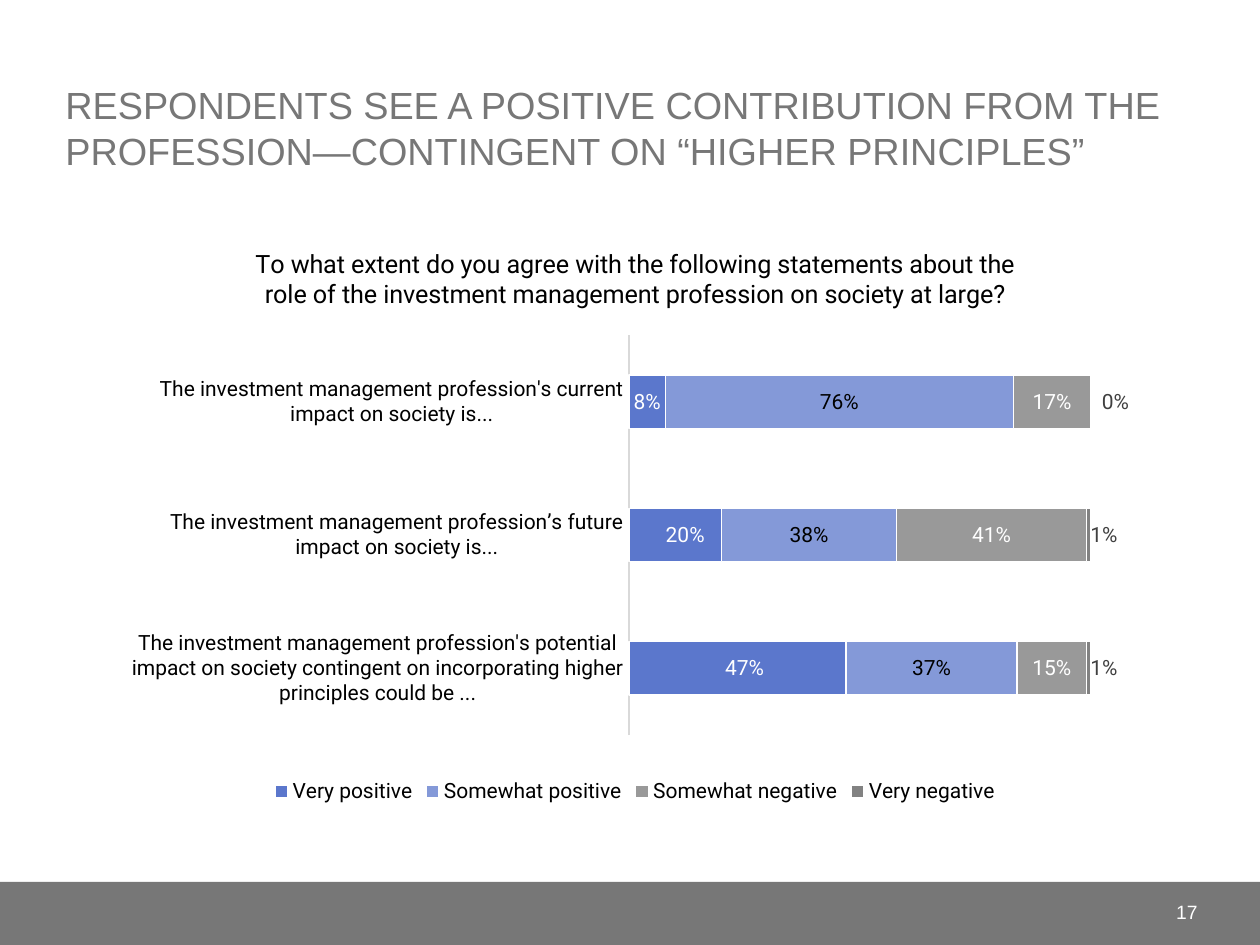
from lxml.etree import SubElement
from pptx import Presentation
from pptx.chart.data import CategoryChartData
from pptx.dml.color import RGBColor
from pptx.enum.chart import XL_CHART_TYPE, XL_LEGEND_POSITION, XL_TICK_LABEL_POSITION, XL_TICK_MARK
from pptx.enum.shapes import MSO_SHAPE
from pptx.enum.text import MSO_ANCHOR, PP_ALIGN
from pptx.oxml import parse_xml
from pptx.oxml.ns import nsdecls, qn
from pptx.util import Emu, Pt

WHITE = RGBColor(0xFF, 0xFF, 0xFF)
BLACK = RGBColor(0x00, 0x00, 0x00)
BLUE = RGBColor(0x5B, 0x77, 0xCC)
GRAY = RGBColor(0x77, 0x77, 0x77)
DARK_GRAY = RGBColor(0x59, 0x59, 0x59)
LABEL_GRAY = RGBColor(0x40, 0x40, 0x40)
AXIS_GRAY = RGBColor(0xD9, 0xD9, 0xD9)

QUESTION = ("To what extent do you agree with the following statements about the "
            "role of the investment management profession on society at large?")
STATEMENTS = [
    "The investment management profession's potential impact on society "
    "contingent on incorporating higher principles could be ...",
    "The investment management profession’s future impact on society is...",
    "The investment management profession's current impact on society is...",
]
ANSWERS = [
    ("Very positive", (0.47, 0.2, 0.08), BLUE, 100, WHITE, {0: 0.007, 1: 0.01}),
    ("Somewhat positive", (0.37, 0.38, 0.76), BLUE, 75, BLACK, {}),
    ("Somewhat negative", (0.15, 0.41, 0.17), GRAY, 75, WHITE, {}),
    ("Very negative", (0.01, 0.01, 0), DARK_GRAY, 75, LABEL_GRAY,
     {0: 0.015, 1: 0.015, 2: 0.024}),
]
PLOT_AREA = {"x": 0.494, "y": 0.19, "w": 0.454, "h": 0.684}


def px(length):
    return Emu(round(length * 914400 / 126))


def manual_layout(modes, numbers):
    parts = [f'<c:{tag} val="{value}"/>' for tag, value in [*modes.items(), *numbers.items()]]
    return parse_xml(f'<c:layout {nsdecls("c")}><c:manualLayout>'
                     f'{"".join(parts)}</c:manualLayout></c:layout>')


class SlideWriter:
    heading_font = "Arial"
    chart_font = "Roboto"
    chart_size = 12

    def __init__(self, slide):
        self.slide = slide

    def style(self, font, name, size, color):
        font.name = name
        font.size = Pt(size)
        font.bold = False
        font.color.rgb = color

    def band(self, left, top, width, height, color):
        band = self.slide.shapes.add_shape(
            MSO_SHAPE.RECTANGLE, px(left), px(top), px(width), px(height))
        band.shadow.inherit = False
        band.fill.solid()
        band.fill.fore_color.rgb = color
        band.line.fill.background()

    def text(self, left, top, width, height, words, size, color, anchor, align=PP_ALIGN.LEFT):
        frame = self.slide.shapes.add_textbox(
            px(left), px(top), px(width), px(height)).text_frame
        frame.word_wrap = True
        frame.vertical_anchor = anchor
        paragraph = frame.paragraphs[0]
        paragraph.text = words
        paragraph.alignment = align
        self.style(paragraph.font, self.heading_font, size, color)

    def survey_chart(self, left, top, width, height, question, statements, answers):
        data = CategoryChartData(number_format="0%")
        data.categories = statements
        for name, shares, *_ in answers:
            data.add_series(name, shares)
        chart = self.slide.shapes.add_chart(
            XL_CHART_TYPE.BAR_STACKED_100, px(left), px(top), px(width), px(height), data).chart
        self.style(chart.font, self.chart_font, self.chart_size, BLACK)

        heading = chart.chart_title.text_frame.paragraphs[0]
        heading.text = question
        self.style(heading.font, self.chart_font, 14.4, BLACK)
        chart.chart_title.include_in_layout = False

        chart.has_legend = True
        chart.legend.position = XL_LEGEND_POSITION.BOTTOM
        chart.legend.include_in_layout = False
        self.style(chart.legend.font, self.chart_font, self.chart_size, BLACK)

        self.axes(chart)
        plot = chart.plots[0]
        plot.gap_width = 150
        plot.overlap = 100
        plot.vary_by_categories = False
        for series, answer in zip(plot.series, answers):
            self.answer_bars(series, *answer[2:])

        area = chart._chartSpace.chart.plotArea
        for layout in area.findall(qn("c:layout")):
            area.remove(layout)
        area.insert(0, manual_layout(
            {"layoutTarget": "inner", "xMode": "edge", "yMode": "edge"}, PLOT_AREA))

    def axes(self, chart):
        for axis in (chart.category_axis, chart.value_axis):
            axis.major_tick_mark = XL_TICK_MARK.NONE
            axis.minor_tick_mark = XL_TICK_MARK.NONE
            axis.has_major_gridlines = False
        statements, shares = chart.category_axis, chart.value_axis
        self.style(statements.tick_labels.font, self.chart_font, self.chart_size, BLACK)
        statements.format.line.color.rgb = AXIS_GRAY
        statements.format.line.width = Pt(0.75)
        shares.minimum_scale, shares.maximum_scale = 0, 1
        shares.tick_label_position = XL_TICK_LABEL_POSITION.NONE
        shares.format.line.fill.background()

    def answer_bars(self, series, color, opacity, label_color, label_shifts):
        fill = series.format.fill
        fill.solid()
        fill.fore_color.rgb = color
        if opacity < 100:
            tone = series._element.spPr.find(f'{qn("a:solidFill")}/{qn("a:srgbClr")}')
            SubElement(tone, qn("a:alpha"), val=str(opacity * 1000))
        series.format.line.color.rgb = WHITE
        series.format.line.width = Pt(0.75)

        labels = series.data_labels
        labels.show_value = True
        labels.number_format = "0%"
        labels.number_format_is_linked = False
        self.style(labels.font, self.chart_font, self.chart_size, label_color)
        for index, shift in label_shifts.items():
            self.style(series.points[index].data_label.font,
                       self.chart_font, self.chart_size, label_color)
            label = labels._element.find(f'{qn("c:dLbl")}[{qn("c:idx")}][{index + 1}]')
            label.insert(1, manual_layout({}, {"x": shift, "y": 0}))
            label.insert(2, parse_xml(
                f'<c:numFmt {nsdecls("c")} formatCode="0%" sourceLinked="0"/>'))


def main():
    deck = Presentation()
    deck.slide_width, deck.slide_height = px(1260), px(945)
    writer = SlideWriter(deck.slides.add_slide(deck.slide_layouts[6]))
    writer.band(0, 882, 1260, 63, GRAY)
    writer.text(53, 21, 1154, 158,
                "RESPONDENTS SEE A POSITIVE CONTRIBUTION FROM THE "
                "PROFESSION—CONTINGENT ON “HIGHER PRINCIPLES”",
                21.6, GRAY, MSO_ANCHOR.BOTTOM)
    writer.text(1102, 887, 108, 50, "17", 11, WHITE, MSO_ANCHOR.MIDDLE, PP_ALIGN.RIGHT)
    writer.survey_chart(126, 224, 1018, 585, QUESTION, STATEMENTS, ANSWERS)
    deck.save("out.pptx")


if __name__ == "__main__":
    main()
